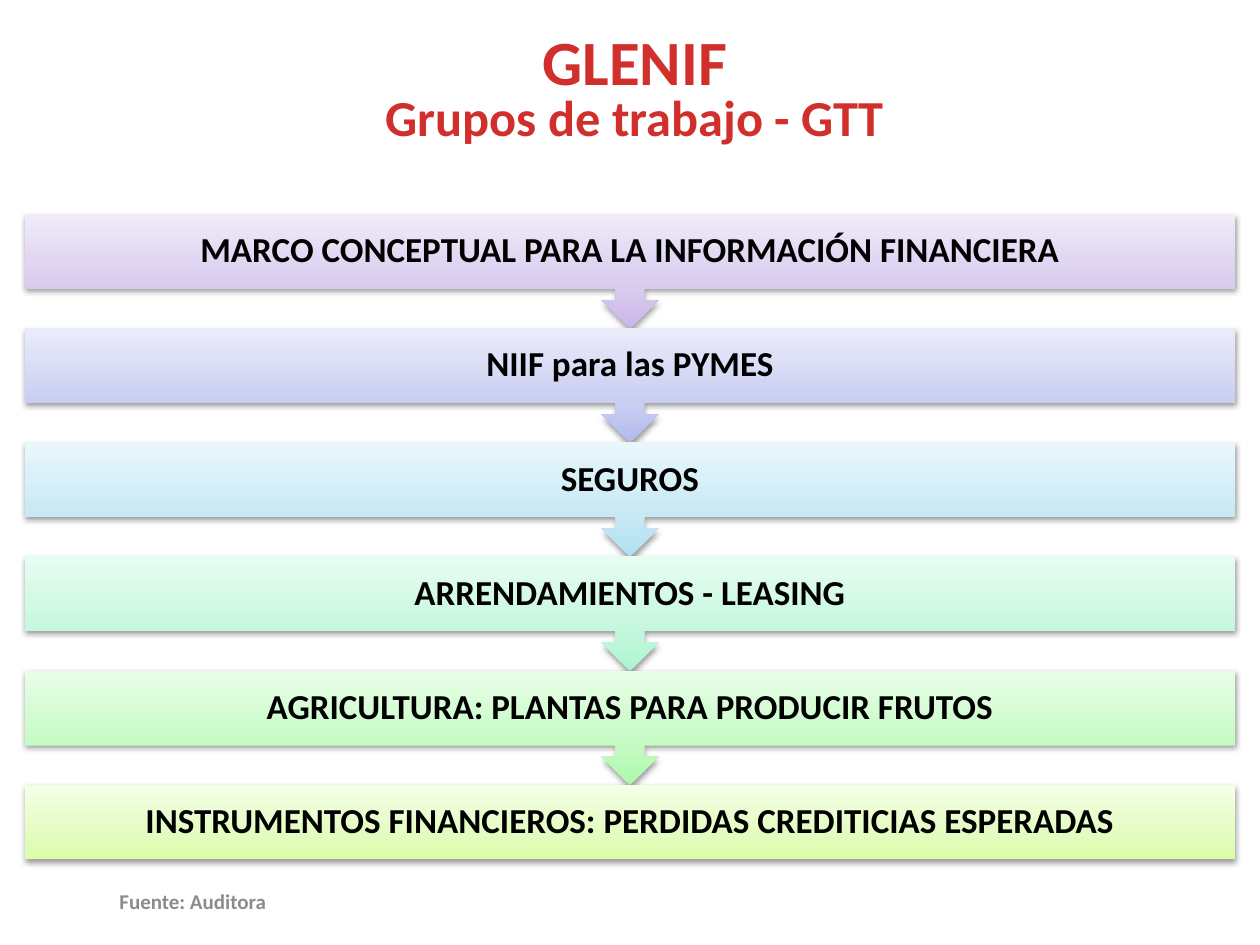
import pptx
import pptx.dml.color
import pptx.enum.shapes
import pptx.enum.text
import pptx.oxml
import pptx.util

Pt = pptx.util.Pt
FORM = pptx.enum.shapes.MSO_SHAPE
NS = 'xmlns:a="http://schemas.openxmlformats.org/drawingml/2006/main"'
SHADOW = f"""<a:effectLst {NS}>
  <a:outerShdw blurRad="{Pt(3.1)}" dist="{Pt(1.6)}" dir="5400000" rotWithShape="0">
    <a:srgbClr val="000000"><a:alpha val="38000"/></a:srgbClr>
  </a:outerShdw></a:effectLst>"""


def color(value):
    return pptx.dml.color.RGBColor.from_string(value)


def write(shape, *lines, sizes, ink="000000", space=1.0, inset=7.2):
    """Fill a shape with centred bold lines, one size per line."""
    frame = shape.text_frame
    frame.word_wrap = True
    frame.vertical_anchor = pptx.enum.text.MSO_ANCHOR.MIDDLE
    frame.margin_left = frame.margin_right = Pt(inset)
    frame.margin_top = frame.margin_bottom = 0
    for i, (text, size) in enumerate(zip(lines, sizes)):
        para = frame.paragraphs[0] if i == 0 else frame.add_paragraph()
        para.alignment = pptx.enum.text.PP_ALIGN.CENTER
        para.line_spacing = space
        run = para.add_run()
        run.text = text
        run.font.name = "Calibri"
        run.font.size = Pt(size)
        run.font.bold = True
        run.font.color.rgb = color(ink)


deck = pptx.Presentation()
deck.slide_width, deck.slide_height = Pt(720), Pt(540)
slide = deck.slides.add_slide(deck.slide_layouts[6])
shapes = slide.shapes

title = shapes.add_textbox(Pt(36.7), Pt(18.4), Pt(652.3), Pt(67.7))
write(title, "GLENIF", "Grupos de trabajo - GTT",
      sizes=(36, 28.8), ink="D02F2C", space=0.8)

# Each step: text, then its gradient from bottom to top
steps = [
    ("MARCO CONCEPTUAL PARA LA INFORMACIÓN FINANCIERA", "C9B5E8", "D8CBEE", "F0EAF9"),
    ("NIIF para las PYMES", "B2BAEC", "C9CEF1", "EAECFA"),
    ("SEGUROS", "AFE0F1", "C7E8F4", "E9F7FC"),
    ("ARRENDAMIENTOS - LEASING", "ACF5D0", "C5F7DD", "E8FDF2"),
    ("AGRICULTURA: PLANTAS PARA PRODUCIR FRUTOS", "ACF9AA", "C5FAC3", "E8FEE7"),
    ("INSTRUMENTOS FINANCIEROS: PERDIDAS CREDITICIAS ESPERADAS",
     "DAFDA7", "E4FCC2", "F5FFE7"),
]
top, pitch = 122.4, 65.2
for i, (text, *tones) in enumerate(steps):
    last = i == len(steps) - 1
    form = FORM.RECTANGLE if last else FORM.DOWN_ARROW_CALLOUT
    height = 42.5 if last else 65.5
    step = shapes.add_shape(form, Pt(14.2), Pt(top + i * pitch), Pt(691.6), Pt(height))
    stops = "".join(
        f'<a:gs pos="{pos}"><a:srgbClr val="{tone}"/></a:gs>'
        for pos, tone in zip((0, 35000, 100000), tones))
    props = step.element.spPr
    props.append(pptx.oxml.parse_xml(
        f'<a:gradFill {NS} rotWithShape="1"><a:gsLst>{stops}</a:gsLst>'
        '<a:lin ang="16200000" scaled="0"/></a:gradFill>'))
    step.line.fill.background()
    props.append(pptx.oxml.parse_xml(SHADOW))
    write(step, text, sizes=(20,), space=0.9, inset=11.4)

source = shapes.add_textbox(Pt(31), Pt(500.4), Pt(158.4), Pt(28.8))
write(source, "Fuente: Auditora", sizes=(12,), ink="8C8C8C")

deck.save("out.pptx")
